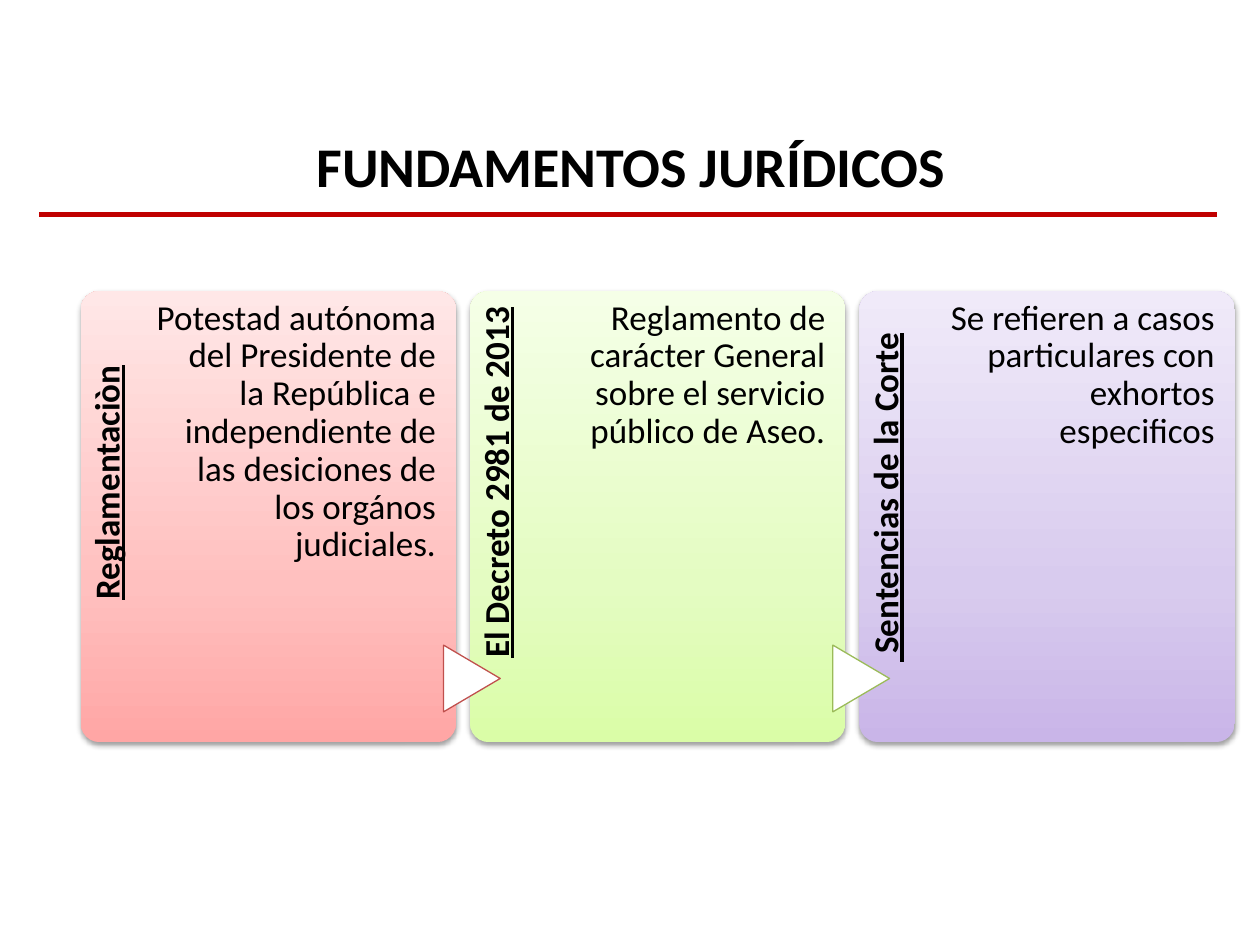
import dataclasses
import typing

import lxml.etree
import pptx
import pptx.dml.color
import pptx.enum.shapes
import pptx.enum.text
import pptx.oxml
import pptx.oxml.ns
import pptx.util

RGB = pptx.dml.color.RGBColor
SHAPE = pptx.enum.shapes.MSO_SHAPE
ALIGN = pptx.enum.text.PP_ALIGN
SPACE = pptx.oxml.ns.nsdecls("a")

BLACK = RGB(0x00, 0x00, 0x00)
WHITE = RGB(0xFF, 0xFF, 0xFF)
RED = RGB(0xC0, 0x00, 0x00)
BRICK = RGB(0xC0, 0x50, 0x4D)
GREEN = RGB(0x9B, 0xBB, 0x59)
PINKS = (RGB(0xFF, 0xA6, 0xA5), RGB(0xFF, 0xC0, 0xBF), RGB(0xFF, 0xE7, 0xE7))
LIMES = (RGB(0xDA, 0xFD, 0xA7), RGB(0xE4, 0xFC, 0xC2), RGB(0xF5, 0xFF, 0xE7))
MAUVES = (RGB(0xC9, 0xB5, 0xE8), RGB(0xD8, 0xCB, 0xEE), RGB(0xF0, 0xEA, 0xF9))

WIDE, HIGH = pptx.util.Inches(10), pptx.util.Inches(7.5)
COL, ROW = WIDE / 100, HIGH / 75
LEFT, TOP, STEP = 6.4, 23.1, 30.9


class Box(typing.NamedTuple):
    left: float
    top: float
    width: float
    height: float

    def place(self) -> tuple[int, ...]:
        return (round(self.left * COL), round(self.top * ROW),
                round(self.width * COL), round(self.height * ROW))


@dataclasses.dataclass
class Card:
    label: str
    text: str
    tints: tuple
    edge: typing.Optional[RGB] = None
    align: typing.Any = ALIGN.CENTER


CARDS = [
    Card("Reglamentaciòn",
         "Potestad autónoma del Presidente de la República e independiente de "
         "las desiciones de los orgános judiciales.", PINKS, BRICK),
    Card("El Decreto 2981 de 2013",
         "Reglamento de carácter General sobre el servicio público de Aseo.",
         LIMES, GREEN),
    Card(" Sentencias de la Corte",
         "Se refieren a casos particulares con exhortos especificos",
         MAUVES, align=ALIGN.LEFT),
]


def shade(blur: float, drop: float, turn: int, alpha: int) -> typing.Any:
    return pptx.oxml.parse_xml(
        f'<a:effectLst {SPACE}><a:outerShdw blurRad="{pptx.util.Pt(blur)}" '
        f'dist="{pptx.util.Pt(drop)}" dir="{turn * 60000}" rotWithShape="0">'
        f'<a:srgbClr val="000000"><a:alpha val="{alpha * 1000}"/></a:srgbClr>'
        '</a:outerShdw></a:effectLst>')


def style(line, size: float, bold: bool = False) -> None:
    font = line.font
    font.size = pptx.util.Pt(size)
    font.name = "Calibri"
    font.bold = bold
    font.color.rgb = BLACK


def add_text(slide, box: Box, text: str, align, inset: float = 0,
             bold: bool = False, turn: int = 0) -> None:
    shape = slide.shapes.add_textbox(*box.place())
    shape.rotation = turn
    frame = shape.text_frame
    frame.word_wrap = True
    frame.margin_left = frame.margin_bottom = 0
    frame.margin_top = pptx.util.Inches(0.07)
    frame.margin_right = pptx.util.Inches(inset)
    line = frame.paragraphs[0]
    line.text = text
    line.alignment = align
    line.line_spacing = 0.9
    style(line, 20, bold)
    line.font.underline = bold


def add_panel(slide, box: Box, tints: tuple) -> None:
    shape = slide.shapes.add_shape(SHAPE.ROUNDED_RECTANGLE, *box.place())
    shape.adjustments[0] = 0.05
    shape.line.fill.background()
    fill = shape.fill
    fill.gradient()
    fill.gradient_angle = 90
    stops = shape._element.spPr.find(".//" + pptx.oxml.ns.qn("a:gsLst"))
    for stop in list(stops):
        stops.remove(stop)
    for spot, tint in zip((0, 35, 100), tints):
        stop = lxml.etree.SubElement(stops, pptx.oxml.ns.qn("a:gs"), pos=str(spot * 1000))
        lxml.etree.SubElement(stop, pptx.oxml.ns.qn("a:srgbClr"), val=str(tint))
    shape._element.spPr.append(shade(3.1, 1.6, 90, 38))


def add_arrow(slide, box: Box, edge: RGB) -> None:
    shape = slide.shapes.add_shape(SHAPE.FLOWCHART_EXTRACT, *box.place())
    shape.rotation = 90
    shape.shadow.inherit = False
    shape.fill.solid()
    shape.fill.fore_color.rgb = WHITE
    shape.line.color.rgb = edge
    shape.line.width = pptx.util.Pt(0.75)


def add_title(slide) -> None:
    title = slide.shapes.title
    title.left, title.top, title.width, title.height = Box(5.1, 9.9, 90, 12.5).place()
    frame = title.text_frame
    frame.vertical_anchor = pptx.enum.text.MSO_ANCHOR.TOP
    line = frame.paragraphs[0]
    line.text = "FUNDAMENTOS JURÍDICOS"
    line.alignment = ALIGN.CENTER
    style(line, 32, True)


def add_rule(slide) -> None:
    start, end, y = round(3.1 * COL), round(96.6 * COL), round(17 * ROW)
    rule = slide.shapes.add_connector(
        pptx.enum.shapes.MSO_CONNECTOR.STRAIGHT, start, y, end, y)
    rule.line.color.rgb = RED
    rule.line.width = pptx.util.Pt(3)
    lxml.etree.SubElement(rule._element.spPr, pptx.oxml.ns.qn("a:effectLst"))


def main() -> None:
    deck = pptx.Presentation()
    deck.slide_width, deck.slide_height = WIDE, HIGH
    slide = deck.slides.add_slide(deck.slide_layouts[5])
    add_title(slide)
    add_rule(slide)
    for rank, card in enumerate(CARDS):
        left = LEFT + rank * STEP
        add_panel(slide, Box(left, TOP, 29.8, 35.8), card.tints)
        add_text(slide, Box(left - 11.7, TOP + 11.7, 29.4, 6), card.label,
                 card.align, inset=0.1, bold=True, turn=270)
        add_text(slide, Box(left + 6, TOP, 22.2, 35.8), card.text, ALIGN.RIGHT)
    for rank, card in enumerate(CARDS):
        if card.edge is not None:
            add_arrow(slide, Box(LEFT + 28.4 + rank * STEP, 51.6, 5.3, 4.5), card.edge)
    deck.save("out.pptx")


if __name__ == "__main__":
    main()
